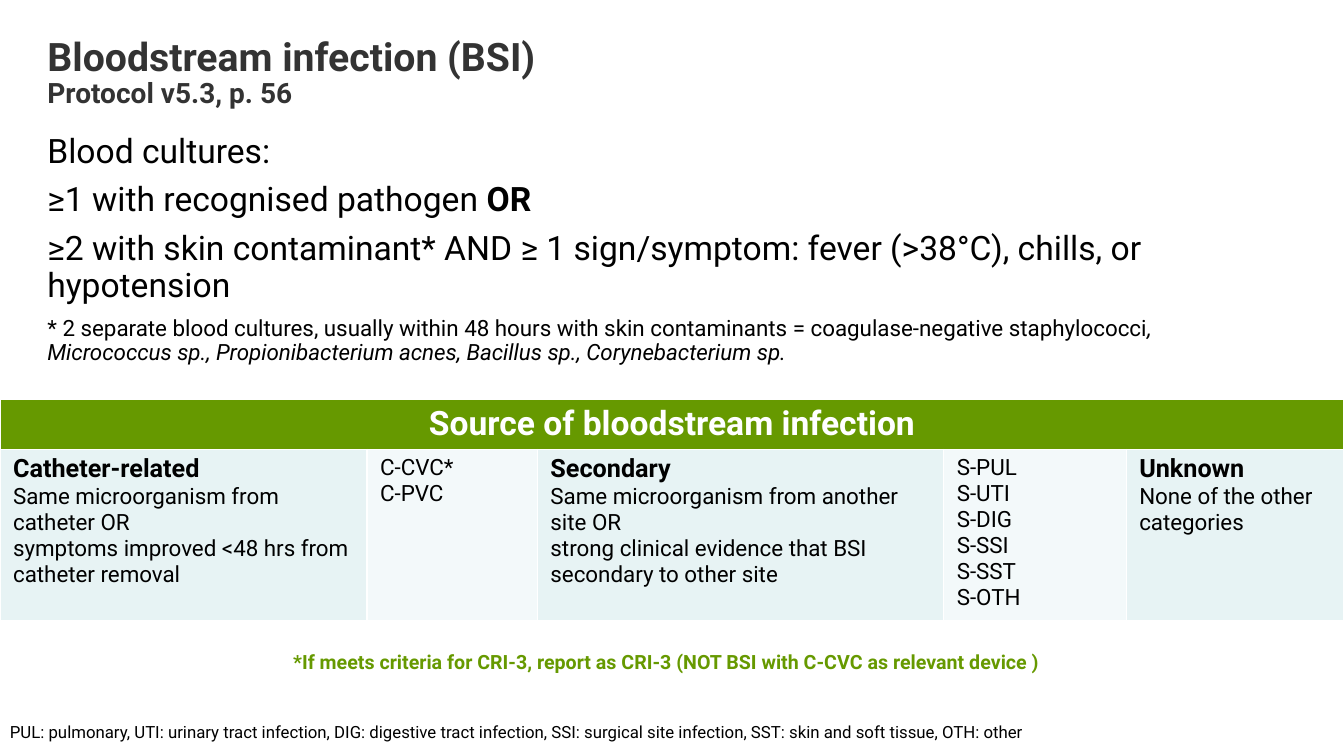
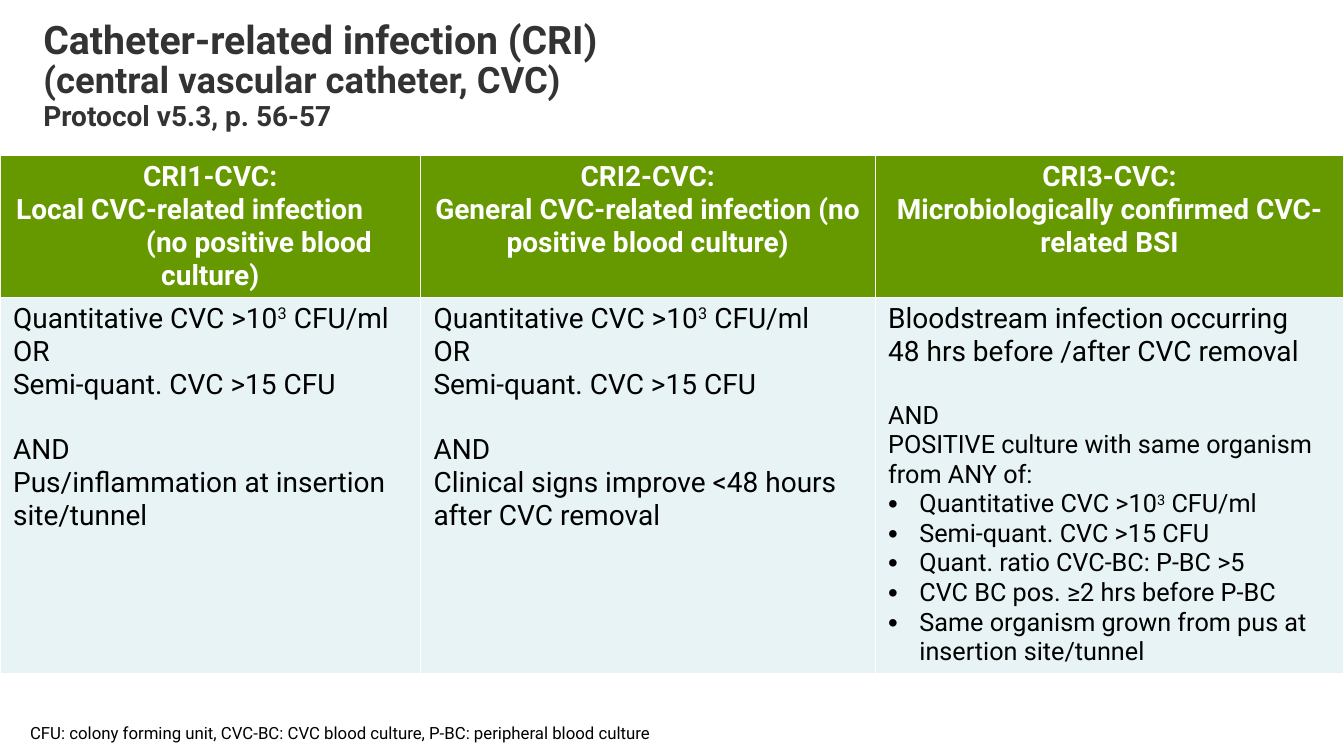
import pptx
import pptx.util
import pptx.dml.color
import pptx.enum.text
import pptx.oxml.ns
from lxml import etree

Inches, Pt = pptx.util.Inches, pptx.util.Pt
ALIGN = pptx.enum.text.PP_ALIGN
WIDTH, HEIGHT = 13.33, 7.5
FONT = "Roboto"
COLORS = {"title": "333333", "text": "000000", "white": "FFFFFF",
          "green": "669900", "pale": "E7F3F4", "paler": "F3F9FA"}
INSET_X, INSET_Y = 0.13, 0.05
BULLET_INDENT = 0.31
BLANK_LINE = 23.4  # height of one 20 pt line, in points


# Content: a paragraph is (text or runs, options); a run is (text, style)
def lines(size, *texts, **options):
    return [(text, dict(options, size=size)) for text in texts]


def headed(heading, *texts):
    return lines(18, heading, bold=True) + lines(16, *texts)


def header(*texts, **options):
    options = {"align": ALIGN.CENTER, "bold": True, "color": "white", **options}
    return lines(options.pop("size", 20), *texts, **options)


def count(ending):
    return [("Quantitative CVC >10", ""), ("3", "super"), (ending, "")]


SEMI_QUANT = "Semi-quant. CVC >15 CFU"

BSI = {
    "title": lines(28, "Bloodstream infection (BSI)") + lines(20, "Protocol v5.3, p. 56"),
    "title_box": (0.47, 0.37, 11.28, 0.87),
    "criteria": lines(
        24, "Blood cultures:",
        [("≥1 with recognised pathogen ", ""), ("OR", "bold")],
        "≥2 with skin contaminant* AND ≥ 1 sign/symptom: fever (>38°C), chills, or hypotension",
    ) + lines(16, [
        ("* 2 separate blood cultures, usually within 48 hours with skin contaminants = "
         "coagulase-negative staphylococci", ""),
        (", Micrococcus sp., Propionibacterium acnes, Bacillus sp., Corynebacterium sp.", "italic")]),
    "criteria_box": (0.47, 1.33, 12, 2.68),
    "table_top": 3.96,
    "columns": [3.64, 1.69, 4.03, 1.81, 2.16],
    "rows": [0.5, 1.7],
    "header": [header("Source of bloodstream infection", size=24)],
    "body": [
        headed("Catheter-related", "Same microorganism from catheter OR",
               "symptoms improved <48 hrs from catheter removal"),
        lines(16, "C-CVC*", "C-PVC"),
        headed("Secondary", "Same microorganism from another site OR",
               "strong clinical evidence that BSI secondary to other site"),
        lines(16, "S-PUL", "S-UTI", "S-DIG", "S-SSI", "S-SST", "S-OTH"),
        headed("Unknown", "None of the other categories"),
    ],
    "fills": ["pale", "paler", "pale", "paler", "pale"],
    "remark": "*If meets criteria for CRI-3, report as CRI-3 (NOT BSI with C-CVC as relevant device )",
    "remark_box": (1.18, 6.43, 10.86, 0.3),
    "footnote": "PUL: pulmonary, UTI: urinary tract infection, DIG: digestive tract infection, "
                "SSI: surgical site infection, SST: skin and soft tissue, OTH: other",
    "footnote_box": (0, 7.13, 13.04, 0.28),
}

CRI = {
    "title": lines(28, "Catheter-related infection (CRI)")
    + lines(26, "(central vascular catheter, CVC)") + lines(20, "Protocol v5.3, p. 56-57"),
    "title_box": (0.43, 0.2, 12, 1.25),
    "table_top": 1.54,
    "columns": [4.17, 4.51, 4.65],
    "rows": [1.4, 3.73],
    "header": [
        header("CRI1-CVC:")
        + header("Local CVC-related infection", align=ALIGN.LEFT, indent=0.03)
        + header("(no positive blood culture)", indent=0.97),
        header("CRI2-CVC:", "General CVC-related infection (no positive blood culture)"),
        header("CRI3-CVC:", "Microbiologically confirmed CVC-related BSI"),
    ],
    "body": [
        lines(20, count(" CFU/ml OR"), SEMI_QUANT) + lines(20, "AND", before=BLANK_LINE)
        + lines(20, "Pus/inflammation at insertion site/tunnel"),
        lines(20, count(" CFU/ml"), "OR", SEMI_QUANT) + lines(20, "AND", before=BLANK_LINE)
        + lines(20, "Clinical signs improve <48 hours after CVC removal"),
        lines(20, "Bloodstream infection occurring\v48 hrs before /after CVC removal")
        + lines(18, "AND", before=BLANK_LINE)
        + lines(18, "POSITIVE culture with same organism from ANY of:")
        + lines(18, count(" CFU/ml"), SEMI_QUANT, "Quant. ratio CVC-BC: P-BC >5",
                "CVC BC pos. ≥2 hrs before P-BC",
                "Same organism grown from pus at insertion site/tunnel", bullet=True),
    ],
    "fills": ["pale"] * 3,
    "footnote": "CFU: colony forming unit, CVC-BC: CVC blood culture, P-BC: peripheral blood culture",
    "footnote_box": (0.2, 7.14, 13.13, 0.28),
}


# Text
def set_indent(paragraph, left, first):
    properties = paragraph._p.get_or_add_pPr()
    properties.set("marL", str(Inches(left)))
    properties.set("indent", str(Inches(first)))
    return properties


def add_bullet(paragraph):
    properties = set_indent(paragraph, BULLET_INDENT, -BULLET_INDENT)
    for tag, name, value in (("a:buSzPct", "val", "110000"),
                             ("a:buFont", "typeface", "Arial"),
                             ("a:buChar", "char", "•")):
        etree.SubElement(properties, pptx.oxml.ns.qn(tag)).set(name, value)


def add_runs(paragraph, content):
    if isinstance(content, str):
        paragraph.text = content
        return
    for text, style in content:
        run = paragraph.add_run()
        run.text = text
        if style == "super":
            run._r.get_or_add_rPr().set("baseline", "30000")
        elif style:
            setattr(run.font, style, True)


def write(frame, paragraphs, **shared):
    frame.word_wrap = True
    for index, (content, own) in enumerate(paragraphs):
        options = {**shared, **own}
        paragraph = frame.paragraphs[0] if index == 0 else frame.add_paragraph()
        add_runs(paragraph, content)
        if options.get("bullet"):
            add_bullet(paragraph)
        elif "indent" in options:
            set_indent(paragraph, 0, options["indent"])
        paragraph.alignment = options.get("align", ALIGN.LEFT)
        paragraph.line_spacing = options.get("spacing", 1.0)
        paragraph.space_before = Pt(options.get("before", 0) if index else 0)
        paragraph.space_after = Pt(options.get("after", 0))
        font = paragraph.font
        font.name, font.size = FONT, Pt(options["size"])
        font.bold = options.get("bold", False)
        font.color.rgb = pptx.dml.color.RGBColor.from_string(COLORS[options.get("color", "text")])


def remove_margins(frame):
    frame.margin_left = frame.margin_top = frame.margin_right = frame.margin_bottom = 0


def add_text(slide, box, paragraphs, margins=True, **shared):
    frame = slide.shapes.add_textbox(*map(Inches, box)).text_frame
    if not margins:
        remove_margins(frame)
    write(frame, paragraphs, **shared)


# Slide parts
def add_title(slide, box, paragraphs):
    title = slide.shapes.title
    title.left, title.top, title.width, title.height = map(Inches, box)
    frame = title.text_frame
    remove_margins(frame)
    frame.auto_size = pptx.enum.text.MSO_AUTO_SIZE.NONE
    frame.vertical_anchor = pptx.enum.text.MSO_ANCHOR.TOP
    write(frame, paragraphs, bold=True, color="title", spacing=0.9)


def fill_cell(cell, paragraphs, color):
    cell.margin_left = cell.margin_right = Inches(INSET_X)
    cell.margin_top = cell.margin_bottom = Inches(INSET_Y)
    cell.fill.solid()
    cell.fill.fore_color.rgb = pptx.dml.color.RGBColor.from_string(COLORS[color])
    write(cell.text_frame, paragraphs)


def add_definition_table(slide, content):
    columns, rows = content["columns"], content["rows"]
    table = slide.shapes.add_table(
        len(rows), len(columns), 0, Inches(content["table_top"]),
        Inches(WIDTH), Inches(sum(rows))).table
    for column, width in zip(table.columns, columns):
        column.width = Inches(width)
    for row, height in zip(table.rows, rows):
        row.height = Inches(height)
    if len(content["header"]) == 1:
        table.cell(0, 0).merge(table.cell(0, len(columns) - 1))
    for index, paragraphs in enumerate(content["header"]):
        fill_cell(table.cell(0, index), paragraphs, "green")
    for index, (paragraphs, color) in enumerate(zip(content["body"], content["fills"])):
        fill_cell(table.cell(1, index), paragraphs, color)


def add_definition_slide(presentation, content):
    slide = presentation.slides.add_slide(presentation.slide_layouts.get_by_name("Title Only"))
    add_title(slide, content["title_box"], content["title"])
    if "criteria" in content:
        add_text(slide, content["criteria_box"], content["criteria"],
                 margins=False, spacing=0.9, before=3, after=6)
    add_definition_table(slide, content)
    if "remark" in content:
        add_text(slide, content["remark_box"], lines(14, content["remark"]),
                 bold=True, color="green", align=ALIGN.CENTER, spacing=0.85)
    add_text(slide, content["footnote_box"], lines(12, content["footnote"]), spacing=0.9)


def main():
    presentation = pptx.Presentation()
    presentation.slide_width, presentation.slide_height = Inches(WIDTH), Inches(HEIGHT)
    for content in (BSI, CRI):
        add_definition_slide(presentation, content)
    presentation.save("out.pptx")


if __name__ == "__main__":
    main()
